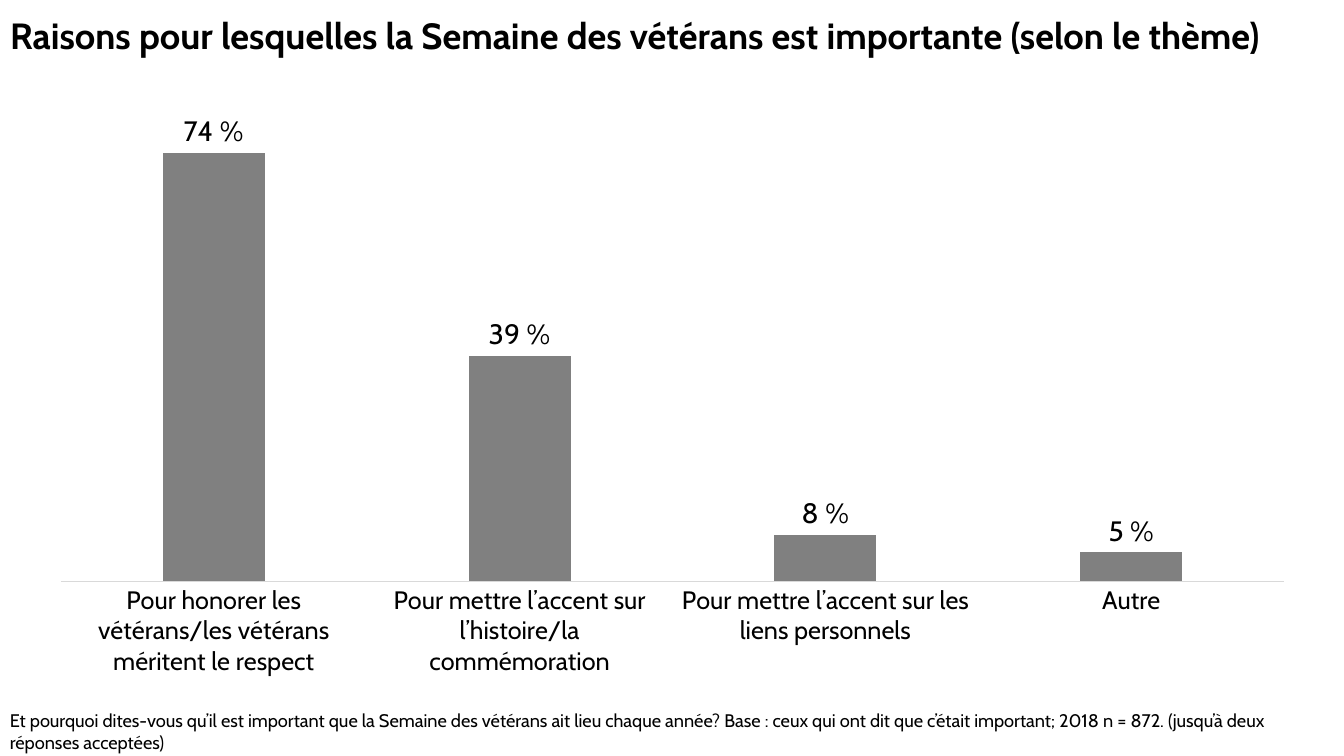
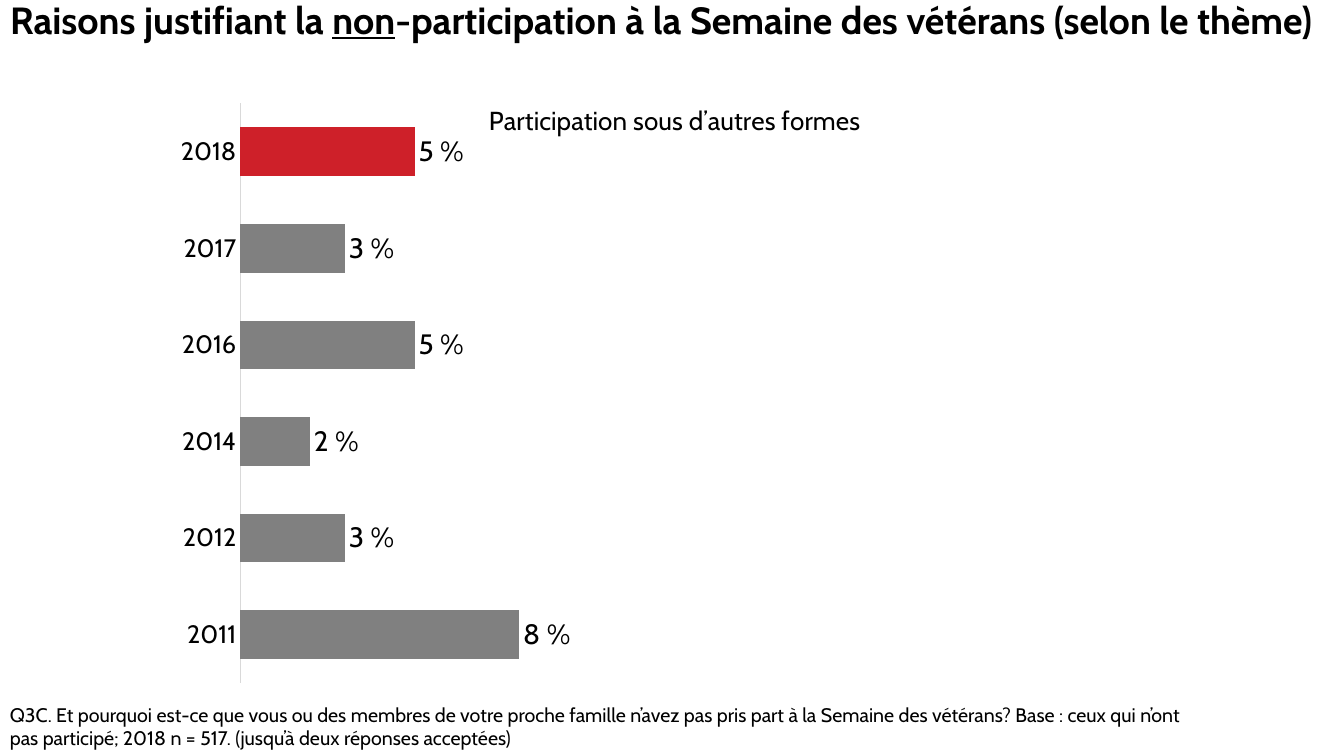
import dataclasses
import typing

import lxml.etree
import pptx
import pptx.chart.data
import pptx.dml.color
import pptx.enum.chart
import pptx.enum.text
import pptx.oxml.ns
import pptx.util

Inches = pptx.util.Inches
Pt = pptx.util.Pt
Kind = pptx.enum.chart.XL_CHART_TYPE
Box = tuple[float, float, float, float]

FACE = "Cabin"
INK = "000000"
PAPER = "FFFFFF"
GREY = "808080"
RED = "CE2029"
RULE = "D9D9D9"


@dataclasses.dataclass
class Graph:
    kind: Kind
    box: Box
    data: dict[str, float]
    gap: int
    flip: bool = False
    top: float | None = None
    head: str = ""
    spot: tuple[float, float] = (0, 0)
    plot: Box | None = None
    mark: int | None = None


@dataclasses.dataclass
class Page:
    title: list[str]
    place: Box
    size: float
    note: str
    foot: Box
    small: float
    graph: Graph


PAGES = [
    Page(
        ["Raisons pour lesquelles la Semaine des vétérans est importante (selon le thème)"],
        (0, 0, 13.33, 0.74), 26,
        "Et pourquoi dites-vous qu’il est important que la Semaine des vétérans ait lieu "
        "chaque année? Base : ceux qui ont dit que c’était important; 2018 n = 872. "
        "(jusqu’à deux réponses acceptées)",
        (0, 6.99, 13.33, 0.54), 13,
        Graph(
            Kind.COLUMN_CLUSTERED, (0.35, 1.06, 12.64, 5.77),
            {
                "Autre": 0.05,
                "Pour mettre l’accent sur les liens personnels": 0.08,
                "Pour mettre l’accent sur l’histoire/la commémoration": 0.39,
                "Pour honorer les vétérans/les vétérans méritent le respect": 0.74,
            },
            gap=200, flip=True, top=0.8,
        ),
    ),
    Page(
        ["Raisons justifiant la ", "non",
         "-participation à la Semaine des vétérans (selon le thème)"],
        (0, -0.18, 13.33, 0.8), 27,
        "Q3C. Et pourquoi est-ce que vous ou des membres de votre proche famille n’avez pas "
        "pris part à la Semaine des vétérans? Base : ceux qui n’ont pas participé; "
        "2018 n = 517. (jusqu’à deux réponses acceptées)",
        (0, 6.92, 12.07, 0.57), 14,
        Graph(
            Kind.BAR_CLUSTERED, (0.46, 0.73, 12.41, 6.05),
            {"2011": 0.08, "2012": 0.03, "2014": 0.02,
             "2016": 0.05, "2017": 0.03, "2018": 0.05},
            gap=99, top=0.3, head="Participation sous d’autres formes",
            spot=(0.35, 0.04), plot=(0.155, 0.049, 0.836, 0.951), mark=5,
        ),
    ),
]


def shade(code: str) -> pptx.dml.color.RGBColor:
    return pptx.dml.color.RGBColor.from_string(code)


def paint(fill: typing.Any, code: str) -> None:
    fill.solid()
    fill.fore_color.rgb = shade(code)


def style(font: typing.Any, size: float, bold: bool = False, under: bool = False) -> None:
    font.name = FACE
    font.size = Pt(size)
    font.bold = bold
    font.underline = under
    font.color.rgb = shade(INK)


def write(para: typing.Any, text: str, **form: typing.Any) -> None:
    run = para.add_run()
    run.text = text
    style(run.font, **form)


def fix(node: typing.Any, **parts: typing.Any) -> None:
    name = pptx.oxml.ns.qn
    frame = node.find(name("c:layout"))
    if frame is None:
        frame = lxml.etree.Element(name("c:layout"))
        node.insert(0, frame)
    manual = lxml.etree.SubElement(frame, name("c:manualLayout"))
    for tag, value in parts.items():
        lxml.etree.SubElement(manual, name(f"c:{tag}")).set("val", str(value))


def draw(slide: typing.Any, graph: Graph) -> None:
    data = pptx.chart.data.CategoryChartData(number_format="0%")
    data.categories = list(graph.data)
    data.add_series("Series 1", list(graph.data.values()))
    chart = slide.shapes.add_chart(graph.kind, *map(Inches, graph.box), data).chart
    chart.has_legend = False
    style(chart.font, 16)

    axis = chart.category_axis
    axis.reverse_order = graph.flip
    axis.major_tick_mark = pptx.enum.chart.XL_TICK_MARK.NONE
    axis.format.line.color.rgb = shade(RULE)
    axis.format.line.width = Pt(0.75)
    style(axis.tick_labels.font, 18)
    scale = chart.value_axis
    scale.visible = False
    scale.has_major_gridlines = False
    scale.minimum_scale = 0
    scale.maximum_scale = graph.top

    plot = chart.plots[0]
    plot.gap_width = graph.gap
    plot.vary_by_categories = False
    bars = plot.series[0]
    paint(bars.format.fill, GREY)
    if graph.mark is not None:
        paint(bars.points[graph.mark].format.fill, RED)
    labels = bars.data_labels
    labels.show_value = True
    labels.number_format = "0\\ %"
    labels.number_format_is_linked = False
    labels.position = pptx.enum.chart.XL_LABEL_POSITION.OUTSIDE_END
    style(labels.font, 20)

    chart.has_title = bool(graph.head)
    if graph.head:
        title = chart.chart_title
        write(title.text_frame.paragraphs[0], graph.head, size=18.6)
        left, top = graph.spot
        fix(title._element, xMode="edge", yMode="edge", x=left, y=top)
    if graph.plot:
        left, top, wide, high = graph.plot
        fix(chart._chartSpace.chart.plotArea, layoutTarget="inner",
            xMode="edge", yMode="edge", x=left, y=top, w=wide, h=high)


def build(deck: typing.Any, page: Page) -> None:
    slide = deck.slides.add_slide(deck.slide_layouts[5])
    title = slide.shapes.title
    title.left, title.top, title.width, title.height = map(Inches, page.place)
    paint(title.fill, PAPER)
    frame = title.text_frame
    frame.auto_size = pptx.enum.text.MSO_AUTO_SIZE.NONE
    frame.vertical_anchor = pptx.enum.text.MSO_ANCHOR.MIDDLE
    frame.word_wrap = True
    para = frame.paragraphs[0]
    para.alignment = pptx.enum.text.PP_ALIGN.LEFT
    para.line_spacing = 0.9
    for rank, text in enumerate(page.title):
        write(para, text, size=page.size, bold=True, under=rank == 1)

    draw(slide, page.graph)

    note = slide.shapes.add_textbox(*map(Inches, page.foot)).text_frame
    note.word_wrap = True
    write(note.paragraphs[0], page.note, size=page.small)


def main() -> None:
    deck = pptx.Presentation()
    deck.slide_width = Inches(13.33)
    deck.slide_height = Inches(7.5)
    for page in PAGES:
        build(deck, page)
    deck.save("out.pptx")


if __name__ == "__main__":
    main()
